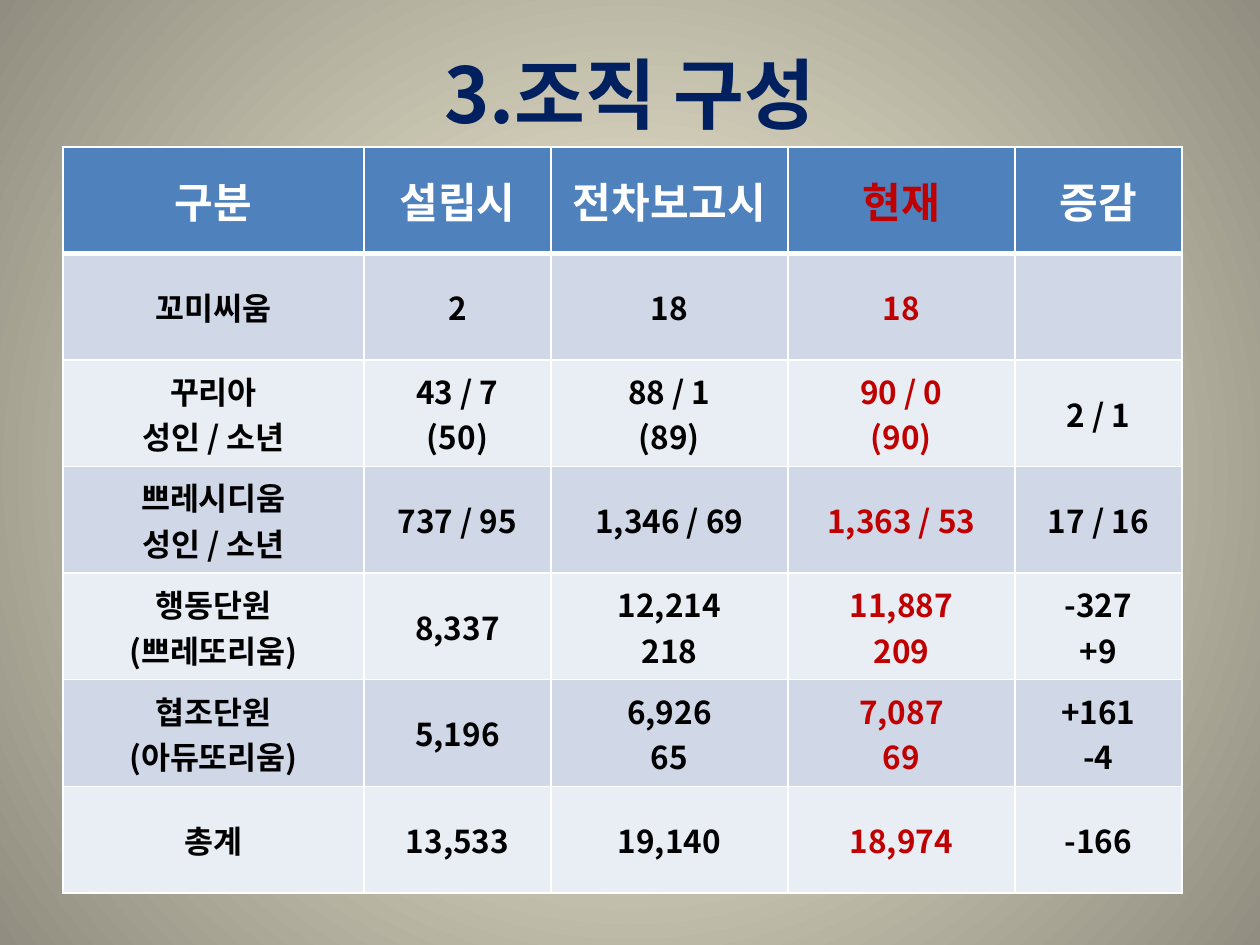
from dataclasses import dataclass

from lxml import etree
from pptx import Presentation
from pptx.dml.color import RGBColor
from pptx.enum.text import MSO_ANCHOR, MSO_AUTO_SIZE, PP_ALIGN
from pptx.oxml.ns import qn
from pptx.util import Emu, Pt

CENTER = PP_ALIGN.CENTER
MIDDLE = MSO_ANCHOR.MIDDLE
NO_AUTOFIT = MSO_AUTO_SIZE.NONE
TITLE_ONLY_LAYOUT = 5
EMU_PER_PX = 914400 / 126


@dataclass(frozen=True)
class Theme:
    font: str = "Noto Sans CJK KR"
    title_size: int = 44
    header_size: int = 24
    body_size: int = 18
    title: str = "002060"
    text: str = "000000"
    current: str = "C00000"
    line: str = "FFFFFF"
    header_text: str = "FFFFFF"
    header_fill: str = "4F81BD"
    bands: tuple = ("D0D8E8", "E9EDF4")
    glow: str = "FCF7DD"
    rim: str = "918E81"


THEME = Theme()
TITLE = "3.조직 구성"
HEADINGS = ["구분", "설립시", "전차보고시", "현재", "증감"]
CURRENT_COLUMN = HEADINGS.index("현재")
COUNTS = [
    ["꼬미씨움", "2", "18", "18", ""],
    ["꾸리아\n성인 / 소년", "43 / 7\n(50)", "88 / 1\n(89)", "90 / 0\n(90)", "2 / 1"],
    ["쁘레시디움\n성인 / 소년", "737 / 95", "1,346 / 69", "1,363 / 53", "17 / 16"],
    ["행동단원\n(쁘레또리움)", "8,337", "12,214\n218", "11,887\n209", "-327\n+9"],
    ["협조단원\n(아듀또리움)", "5,196", "6,926\n65", "7,087\n69", "+161\n-4"],
    ["총계", "13,533", "19,140", "18,974", "-166"],
]
COLUMN_WIDTHS = [301, 187, 237, 227, 167]


def px(length):
    return Emu(round(length * EMU_PER_PX))


def write_text(frame, text, *, size, color):
    """Fill a frame with bold centred text, one paragraph per line."""
    frame.text = text
    for paragraph in frame.paragraphs:
        paragraph.alignment = CENTER
        for run in paragraph.runs:
            font = run.font
            font.size = Pt(size)
            font.bold = True
            font.color.rgb = RGBColor.from_string(color)
            font.name = THEME.font
            east_asian = etree.SubElement(run._r.get_or_add_rPr(), qn("a:ea"))
            east_asian.set("typeface", THEME.font)


def paint_background(slide):
    """Radial gradient from the centre of the slide."""
    fill = slide.background.fill
    fill.gradient()
    for stop, color in zip(fill.gradient_stops, (THEME.glow, THEME.rim)):
        stop.color.rgb = RGBColor.from_string(color)
    linear = slide.element.find(".//" + qn("a:lin"))
    radial = etree.Element(qn("a:path"), {"path": "circle"})
    sides = dict.fromkeys("ltrb", "50000")
    etree.SubElement(radial, qn("a:fillToRect"), sides)
    linear.getparent().replace(linear, radial)


def add_title(slide):
    title = slide.shapes.title
    title.left, title.top, title.width, title.height = map(px, (63, 38, 1134, 110))
    frame = title.text_frame
    frame.auto_size = NO_AUTOFIT
    frame.vertical_anchor = MIDDLE
    write_text(frame, TITLE, size=THEME.title_size, color=THEME.title)


def set_borders(cell, **widths):
    """Draw cell borders; widths in points, keyed by side L, R, T, B."""
    properties = cell._tc.get_or_add_tcPr()
    for side, width in widths.items():
        line = etree.SubElement(properties, qn(f"a:ln{side}"), w=str(Pt(width)))
        solid = etree.SubElement(line, qn("a:solidFill"))
        etree.SubElement(solid, qn("a:srgbClr"), val=THEME.line)


def format_cell(cell, text, row, column):
    is_header = row == 0
    set_borders(cell, L=1, R=1, T=3 if row == 1 else 1, B=3 if is_header else 1)
    cell.fill.solid()
    fill = THEME.header_fill if is_header else THEME.bands[(row - 1) % 2]
    cell.fill.fore_color.rgb = RGBColor.from_string(fill)
    cell.vertical_anchor = MIDDLE
    color = THEME.header_text if is_header else THEME.text
    if column == CURRENT_COLUMN:
        color = THEME.current
    size = THEME.header_size if is_header else THEME.body_size
    write_text(cell.text_frame, text, size=size, color=color)


def add_counts_table(slide):
    rows = [HEADINGS, *COUNTS]
    table = slide.shapes.add_table(
        len(rows), len(HEADINGS),
        px(63), px(147), px(sum(COLUMN_WIDTHS)), px(746),
    ).table
    for column, width in zip(table.columns, COLUMN_WIDTHS):
        column.width = px(width)
    for row, texts in enumerate(rows):
        for column, text in enumerate(texts):
            format_cell(table.cell(row, column), text, row, column)


def main():
    presentation = Presentation()
    presentation.slide_width, presentation.slide_height = px(1260), px(945)
    layout = presentation.slide_layouts[TITLE_ONLY_LAYOUT]
    slide = presentation.slides.add_slide(layout)
    paint_background(slide)
    add_title(slide)
    add_counts_table(slide)
    presentation.save("out.pptx")


if __name__ == "__main__":
    main()
